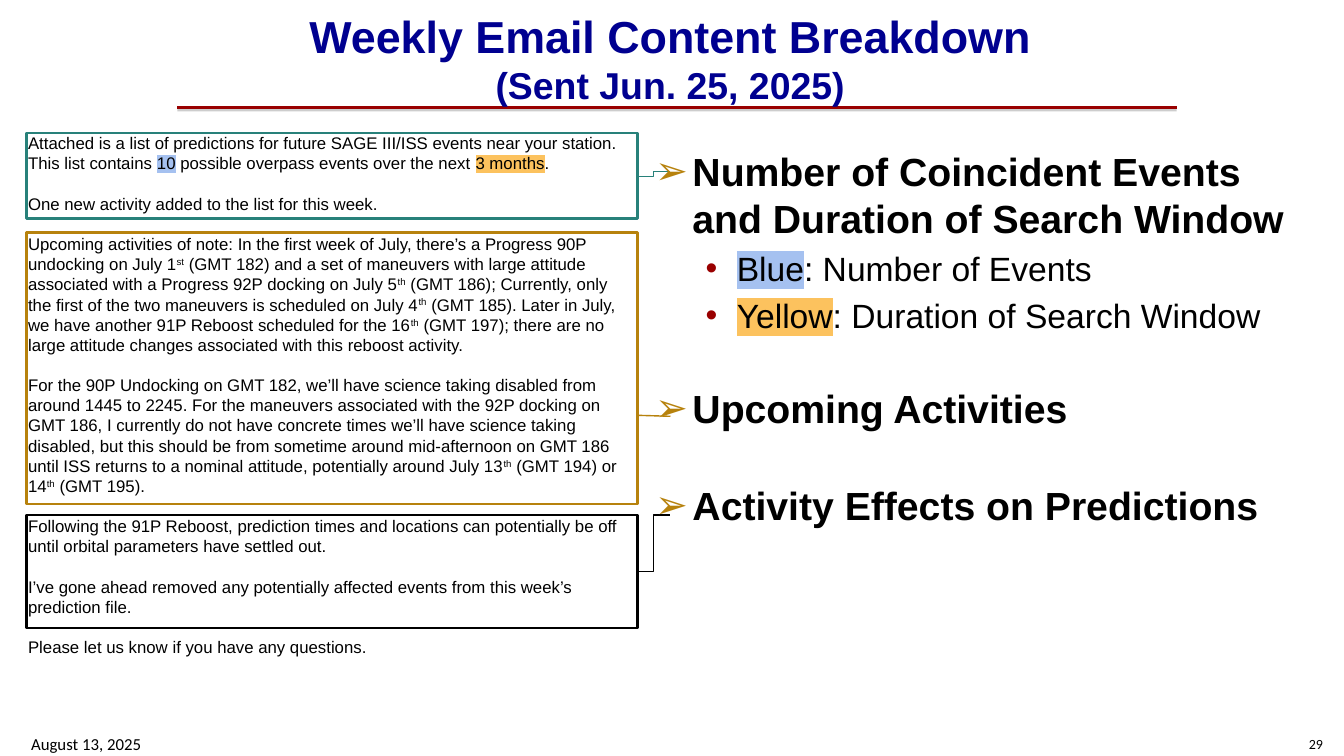
from dataclasses import dataclass

from lxml import etree
from pptx import Presentation
from pptx.dml.color import RGBColor
from pptx.enum.shapes import MSO_CONNECTOR as Link, MSO_SHAPE as Preset
from pptx.enum.text import MSO_ANCHOR as Anchor, PP_ALIGN as Align
from pptx.oxml.ns import qn
from pptx.util import Inches, Pt

BLACK, NAVY, RED, TEAL, GOLD = "000000", "000090", "990000", "28817A", "B7820D"
BLUE_MARK, YELLOW_MARK = "A5C1F0", "FCC25E"
LINE_HEIGHT = 1.2
EMAIL_SIZE = 12
EMAIL_GAP = EMAIL_SIZE * LINE_HEIGHT
TOPIC_GAP = 35.4


def color(value):
    return RGBColor.from_string(value)


def add_element(parent, tag, **attributes):
    return etree.SubElement(parent, qn(tag), attributes)


@dataclass
class Span:
    text: str
    highlight: str = ""
    raised: bool = False


@dataclass
class Bullet:
    char: str
    tint: str
    left: float
    hanging: float
    level: int = 0


TOPIC = Bullet("➢", GOLD, 0.37, 0.37)
DETAIL = Bullet("•", RED, 0.81, 0.31, level=1)
ST, TH = Span("st", raised=True), Span("th", raised=True)


class Page:
    """The current slide with its text and line style."""

    def __init__(self, deck, font="Arial"):
        self.shapes = deck.slides.add_slide(deck.slide_layouts[6]).shapes
        self.font = font

    def text_box(self, left, top, width, height, anchor=Anchor.TOP):
        box = self.shapes.add_textbox(*map(Inches, (left, top, width, height)))
        box.text_frame.word_wrap = True
        box.text_frame.vertical_anchor = anchor
        return box.text_frame

    def add_para(self, frame, spans, size, tint=BLACK, bold=False, before=0,
                 align=Align.LEFT, bullet=None, font=None, spaced=True):
        """Fill the first paragraph if it is empty, else append one."""
        first = frame.paragraphs[0]
        para = frame.add_paragraph() if first.runs else first
        para.alignment = align
        para.space_before = Pt(before)
        if spaced:
            para.line_spacing = Pt(size * LINE_HEIGHT)
        if bullet:
            self.add_bullet(para, bullet)
        for item in spans:
            span = item if isinstance(item, Span) else Span(item)
            run = para.add_run()
            run.text = span.text
            run.font.size = Pt(size)
            run.font.bold = bold
            run.font.color.rgb = color(tint)
            run.font.name = font or self.font
            properties = run._r.get_or_add_rPr()
            if span.raised:
                properties.set("baseline", "30000")
            if span.highlight:
                mark = etree.Element(qn("a:highlight"))
                add_element(mark, "a:srgbClr", val=span.highlight)
                properties.find(qn("a:latin")).addprevious(mark)

    def add_bullet(self, para, bullet):
        para.level = bullet.level
        properties = para._p.get_or_add_pPr()
        properties.set("marL", str(Inches(bullet.left)))
        properties.set("indent", str(-Inches(bullet.hanging)))
        tint = add_element(properties, "a:buClr")
        add_element(tint, "a:srgbClr", val=bullet.tint)
        add_element(properties, "a:buFont", typeface=self.font)
        add_element(properties, "a:buChar", char=bullet.char)

    def frame(self, left, top, width, height, tint):
        box = self.shapes.add_shape(
            Preset.RECTANGLE, *map(Inches, (left, top, width, height)))
        box.shadow.inherit = False
        box.fill.background()
        box.line.color.rgb = color(tint)
        box.line.width = Pt(2)

    def line(self, start, end, tint, width=1, kind=Link.STRAIGHT):
        """Draw a connector and return its effect list."""
        link = self.shapes.add_connector(kind, *map(Inches, (*start, *end)))
        link.line.color.rgb = color(tint)
        link.line.width = Pt(width)
        return add_element(link._element.spPr, "a:effectLst")


def add_header(page):
    effects = page.line((1.76, 1.07), (11.67, 1.07), RED, width=2)
    shadow = add_element(effects, "a:outerShdw", blurRad="0",
                         dist=str(Pt(1.6)), dir="5400000", rotWithShape="0")
    shade = add_element(shadow, "a:srgbClr", val="808080")
    add_element(shade, "a:alpha", val="38000")
    title = page.text_box(1.78, 0.22, 9.74, 0.71, Anchor.MIDDLE)
    for text, size in (("Weekly Email Content Breakdown", 32),
                       ("(Sent Jun. 25, 2025)", 26.7)):
        page.add_para(title, [text], size, NAVY, bold=True, align=Align.CENTER)


def add_footer(page):
    for left, text, size, align in ((0.21, "August 13, 2025", 12, Align.LEFT),
                                    (10.11, "29", 10, Align.RIGHT)):
        footer = page.text_box(left, 7.25, 3.11, 0.25, Anchor.MIDDLE)
        page.add_para(footer, [text], size, align=align, font="Calibri", spaced=False)


def add_topics(page):
    topics = page.text_box(6.4, 1.41, 6.76, 5.97)
    page.add_para(topics, ["Number of Coincident Events and Duration of Search Window"],
                  28, bold=True, bullet=TOPIC)
    for name, mark, meaning in (("Blue", BLUE_MARK, ": Number of Events"),
                                ("Yellow", YELLOW_MARK, ": Duration of Search Window")):
        page.add_para(topics, [Span(name, mark), meaning], 24, before=4.8, bullet=DETAIL)
    for text in ("Upcoming Activities", "Activity Effects on Predictions"):
        page.add_para(topics, [text], 28, bold=True, before=TOPIC_GAP, bullet=TOPIC)


def add_email(page):
    email = page.text_box(0.18, 1.27, 6.22, 5.4)
    paragraphs = [
        ["Attached is a list of predictions for future SAGE III/ISS events near your "
         "station. This list contains ", Span("10", BLUE_MARK),
         " possible overpass events over the next ", Span("3 months", YELLOW_MARK), "."],
        ["One new activity added to the list for this week."],
        ["Upcoming activities of note: In the first week of July, there’s a Progress "
         "90P undocking on July 1", ST,
         " (GMT 182) and a set of maneuvers with large attitude associated with a "
         "Progress 92P docking on July 5", TH,
         " (GMT 186); Currently, only the first of the two maneuvers is scheduled on "
         "July 4", TH,
         " (GMT 185). Later in July, we have another 91P Reboost scheduled for the 16", TH,
         " (GMT 197); there are no large attitude changes associated with this reboost "
         "activity."],
        ["For the 90P Undocking on GMT 182, we’ll have science taking disabled from "
         "around 1445 to 2245. For the maneuvers associated with the 92P docking on "
         "GMT 186, I currently do not have concrete times we’ll have science taking "
         "disabled, but this should be from sometime around mid-afternoon on GMT 186 "
         "until ISS returns to a nominal attitude, potentially around July 13", TH,
         " (GMT 194) or 14", TH, " (GMT 195)."],
        ["Following the 91P Reboost, prediction times and locations can potentially be "
         "off until orbital parameters have settled out."],
        ["I’ve gone ahead removed any potentially affected events from this week’s "
         "prediction file."],
        ["Please let us know if you have any questions."],
    ]
    for index, spans in enumerate(paragraphs):
        page.add_para(email, spans, EMAIL_SIZE, before=EMAIL_GAP if index else 0)


def add_callouts(page):
    for top, height, tint, start, end, kind in (
            (1.32, 0.85, TEAL, 1.75, 1.7, Link.ELBOW),
            (2.31, 2.69, GOLD, 4.12, 4.13, Link.STRAIGHT),
            (5.11, 1.12, BLACK, 5.67, 5.11, Link.ELBOW)):
        page.frame(0.26, top, 6.06, height, tint)
        page.line((6.31, start), (6.65, end), tint, kind=kind)


def main():
    deck = Presentation()
    deck.slide_width, deck.slide_height = Inches(13.33), Inches(7.5)
    page = Page(deck)
    add_header(page)
    add_callouts(page)
    add_topics(page)
    add_email(page)
    add_footer(page)
    deck.save("out.pptx")


if __name__ == "__main__":
    main()
